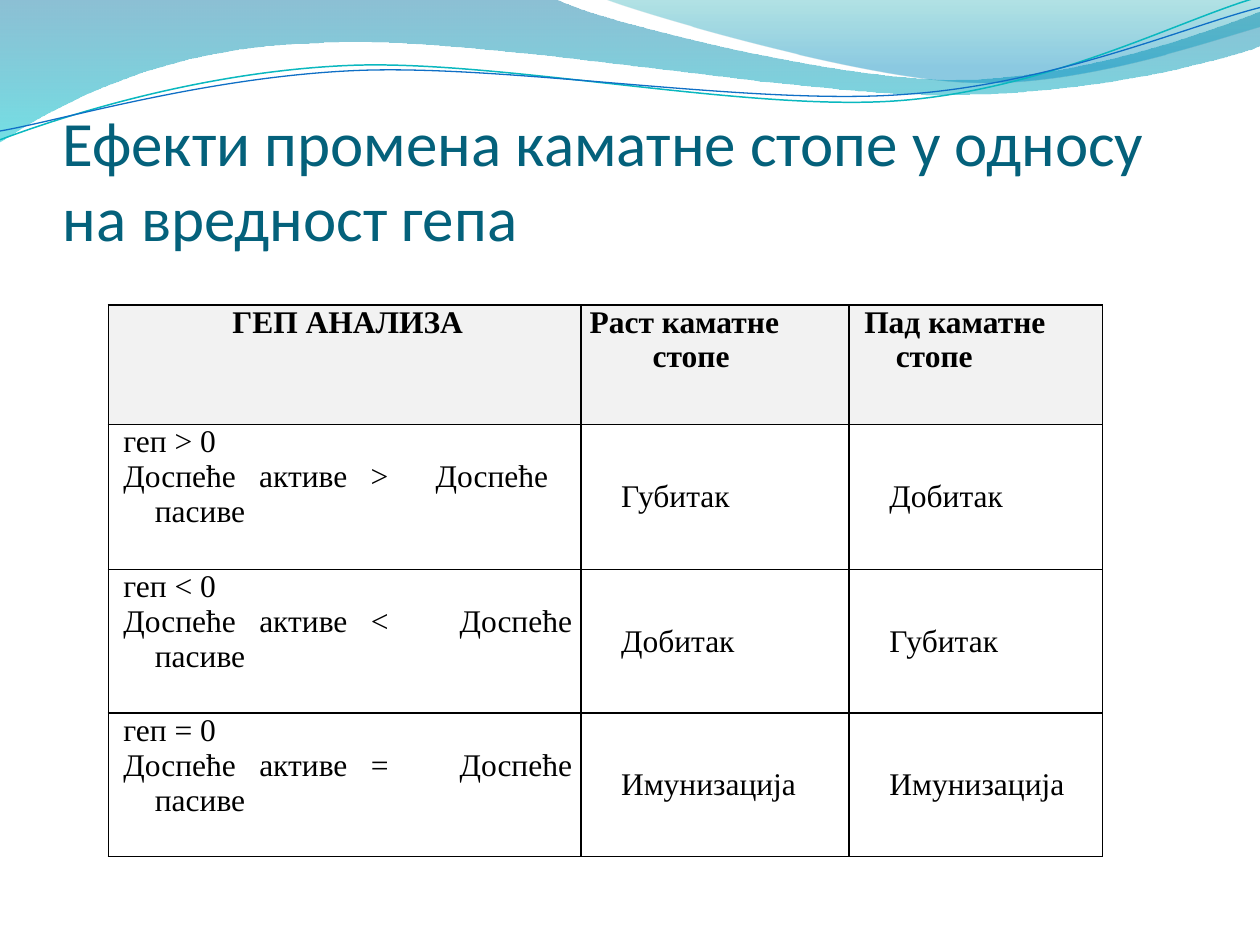
"""Builds the slide on how interest rate changes act on the value of the gap."""
from lxml.etree import SubElement
from pptx import Presentation
from pptx.dml.color import RGBColor
from pptx.enum.text import MSO_ANCHOR, PP_ALIGN
from pptx.oxml import parse_xml
from pptx.oxml.ns import nsdecls, qn
from pptx.util import Inches, Pt

WIDTH, HEIGHT = 10, 7.5
THEME = {
    "title": ("Calibri", 36, "04617B"),
    "body": ("Times New Roman", 18, "000000"),
    "header_fill": "F2F2F2",
    "border": ("000000", 1),
}
TITLE = "Ефекти промена каматне стопе у односу на вредност гепа"
HEADERS = ["ГЕП АНАЛИЗА", "Раст каматне стопе", "Пад каматне стопе"]
OUTCOMES = [
    {"sign": ">", "results": ["Губитак", "Добитак"], "gap": 13.4, "right": 0.26},
    {"sign": "<", "results": ["Добитак", "Губитак"], "gap": 27, "right": 0.07},
    {"sign": "=", "results": ["Имунизација", "Имунизација"], "gap": 27, "right": 0.07},
]
COLUMNS, ROWS = [3.75, 2.13, 2.01], [0.95, 1.15, 1.14, 1.14]
HEADER_INDENTS = [(0.3, -0.25), (0.5, -0.5), (0.3, -0.25)]
CONDITION_INDENT, OUTCOME_INDENT = (0.3, -0.25), (0.5, -0.25)
CELL_MARGIN = 0.07

BANDS = [
    {
        "outline": [(0, 0), (4.4, -0.01), (4.76, 0.17, 6.64, 0.63, 7.58, 0.63),
                    (8.53, 0.63, 9.58, 0.26, 10, 0.09), (10.01, 0.36),
                    (9.83, 0.44, 8.7, 0.76, 7.46, 0.75),
                    (6.22, 0.75, 3.82, 0.28, 2.57, 0.34),
                    (1.29, 0.36, 0.46, 0.83, -0.01, 1.13)],
        "stops": [(0, "0074A1", 45), (100, "00C6CF", 55)],
    },
    {
        "outline": [(4.79, -0.01), (5.09, 0.11, 6.82, 0.62, 7.69, 0.65),
                    (8.56, 0.69, 9.61, 0.32, 10, 0.21), (10, 0)],
        "stops": [(0, "00A1A9", 30), (80, "008BBF", 45)],
    },
]
WAVES = [
    {
        "outline": [(0, 1.11), (0.48, 0.93, 1.58, 0.57, 2.77, 0.52),
                    (3.95, 0.47, 5.93, 0.89, 7.13, 0.8),
                    (8.33, 0.71, 9.38, 0.15, 9.98, -0.02)],
        "line": ("0AB8BF", 0.85),
    },
    {
        "outline": [(0, 1.04), (0.47, 0.96, 1.64, 0.61, 2.83, 0.56),
                    (4.03, 0.51, 5.97, 0.84, 7.17, 0.75),
                    (8.36, 0.67, 9.41, 0.21, 10, 0.06)],
        "line": ("0F6FC6", 0.75),
    },
]


def add_curve(page, outline, close):
    anchors = [(Inches(step[-2]), Inches(step[-1])) for step in outline]
    builder = page.shapes.build_freeform(*anchors[0])
    builder.add_line_segments(anchors[1:], close=close)
    shape = builder.convert_to_shape()
    shape.shadow.inherit = False
    segments = list(shape.element.iter(qn("a:lnTo")))
    for segment, step in zip(segments, outline[1:]):
        if len(step) == 6:
            segment.tag = qn("a:cubicBezTo")
            for place in (0, 1):
                x, y = step[2 * place:2 * place + 2]
                control = parse_xml(f'<a:pt {nsdecls("a")} x="{Inches(x) - shape.left}" '
                                    f'y="{Inches(y) - shape.top}"/>')
                segment.insert(place, control)
    return shape


def add_band(page, band):
    shape = add_curve(page, band["outline"], True)
    shape.line.fill.background()
    stops = "".join(
        f'<a:gs pos="{place * 1000}"><a:srgbClr val="{color}">'
        f'<a:alpha val="{alpha * 1000}"/></a:srgbClr></a:gs>'
        for place, color, alpha in band["stops"])
    gradient = parse_xml(f'<a:gradFill {nsdecls("a")}><a:gsLst>{stops}</a:gsLst>'
                         '<a:lin ang="5400000" scaled="0"/></a:gradFill>')
    shape.element.spPr.find(qn("a:custGeom")).addnext(gradient)


def add_wave(page, wave):
    shape = add_curve(page, wave["outline"], False)
    shape.fill.background()
    color, width = wave["line"]
    shape.line.color.rgb = RGBColor.from_string(color)
    shape.line.width = Pt(width)


def add_span(para, text, style, bold=False, spacing=0):
    span = para.add_run()
    span.text = text
    span.font.name, size, color = style
    span.font.size = Pt(size)
    span.font.bold = bold
    span.font.color.rgb = RGBColor.from_string(color)
    if spacing:
        span.font._element.set("spc", str(round(spacing * 100)))


def add_title(page):
    box = page.shapes.add_textbox(Inches(0.05 * WIDTH), Inches(0.77),
                                  Inches(0.9 * WIDTH), Inches(1.25))
    frame = box.text_frame
    frame.word_wrap = True
    frame.vertical_anchor = MSO_ANCHOR.BOTTOM
    frame.margin_left = frame.margin_right = frame.margin_bottom = 0
    add_span(frame.paragraphs[0], TITLE, THEME["title"])


def add_borders(cell):
    color, width = THEME["border"]
    properties = cell._tc.get_or_add_tcPr()
    for place, side in enumerate(("lnL", "lnR", "lnT", "lnB")):
        line = parse_xml(f'<a:{side} {nsdecls("a")} w="{Pt(width)}"/>')
        fill = SubElement(line, qn("a:solidFill"))
        SubElement(fill, qn("a:srgbClr"), val=color)
        properties.insert(place, line)


def fill_cell(cell, lines, indent, align, anchor, header=False, right=CELL_MARGIN):
    cell.margin_left, cell.margin_right = Inches(CELL_MARGIN), Inches(right)
    cell.margin_top = cell.margin_bottom = 0
    cell.vertical_anchor = anchor
    if header:
        cell.fill.solid()
        cell.fill.fore_color.rgb = RGBColor.from_string(THEME["header_fill"])
    else:
        cell.fill.background()
    add_borders(cell)
    frame = cell.text_frame
    for index, spans in enumerate(lines):
        para = frame.add_paragraph() if index else frame.paragraphs[0]
        para.alignment = align
        properties = para._p.get_or_add_pPr()
        for name, length in zip(("marL", "indent"), indent):
            properties.set(name, str(Inches(length)))
        for text, spacing in spans:
            add_span(para, text, THEME["body"], header, spacing)


def add_gap_table(page):
    table = page.shapes.add_table(len(ROWS), len(COLUMNS), Inches(0.86), Inches(2.42),
                                  Inches(sum(COLUMNS)), Inches(sum(ROWS))).table
    table.first_row = table.horz_banding = False
    for tracks, lengths, side in ((table.columns, COLUMNS, "width"),
                                  (table.rows, ROWS, "height")):
        for track, length in zip(tracks, lengths):
            setattr(track, side, Inches(length))
    for column, (text, indent) in enumerate(zip(HEADERS, HEADER_INDENTS)):
        align = PP_ALIGN.LEFT if column else PP_ALIGN.CENTER
        fill_cell(table.cell(0, column), [[(text, 0)]], indent, align,
                  MSO_ANCHOR.TOP, header=True)
    for row, outcome in enumerate(OUTCOMES, 1):
        sign = outcome["sign"]
        condition = [[(f"геп {sign} 0", 0)],
                     [(f"Доспеће активе {sign}", 0), (" ", outcome["gap"]),
                      ("Доспеће пасиве", 0)]]
        fill_cell(table.cell(row, 0), condition, CONDITION_INDENT, PP_ALIGN.JUSTIFY,
                  MSO_ANCHOR.TOP, right=outcome["right"])
        for column, result in enumerate(outcome["results"], 1):
            fill_cell(table.cell(row, column), [[(result, 0)]], OUTCOME_INDENT,
                      PP_ALIGN.LEFT, MSO_ANCHOR.MIDDLE)


def main():
    deck = Presentation()
    deck.slide_width, deck.slide_height = Inches(WIDTH), Inches(HEIGHT)
    page = deck.slides.add_slide(deck.slide_layouts[6])
    for band in BANDS:
        add_band(page, band)
    for wave in WAVES:
        add_wave(page, wave)
    add_title(page)
    add_gap_table(page)
    deck.save("out.pptx")


if __name__ == "__main__":
    main()
